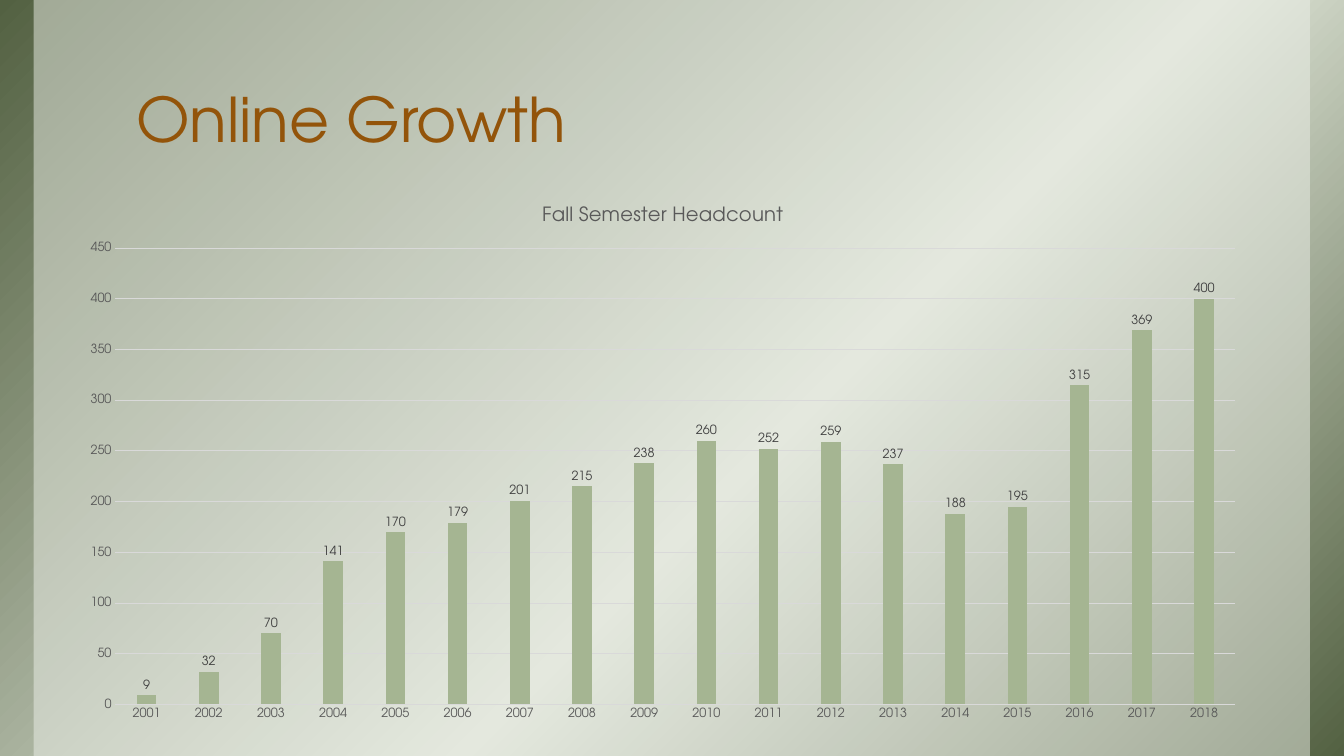
from lxml.etree import SubElement
from pptx import Presentation
from pptx.chart.data import CategoryChartData
from pptx.dml.color import RGBColor
from pptx.enum.chart import XL_CHART_TYPE, XL_LABEL_POSITION, XL_TICK_MARK
from pptx.enum.shapes import MSO_SHAPE
from pptx.enum.text import MSO_ANCHOR
from pptx.oxml.ns import qn
from pptx.util import Cm, Pt

FONT = "TeX Gyre Adventor"
DARK_GREEN = RGBColor(0x53, 0x61, 0x42)
PALE_GREEN = RGBColor(0xDB, 0xE1, 0xD3)
PANEL = RGBColor(0xED, 0xF0, 0xE9)
BROWN = RGBColor(0x93, 0x54, 0x0A)
BAR_GREEN = RGBColor(0xA5, 0xB5, 0x92)
GRID_GRAY = RGBColor(0xD9, 0xD9, 0xD9)
AXIS_GRAY = RGBColor(0x59, 0x59, 0x59)
LABEL_GRAY = RGBColor(0x40, 0x40, 0x40)
BLACK = RGBColor(0, 0, 0)


def style_font(font, size, color):
    font.name = FONT
    font.size = Pt(size)
    font.bold = False
    font.color.rgb = color


def add_plain_rectangle(left, width):
    """Add a full-height rectangle without line or shadow."""
    shape = slide.shapes.add_shape(
        MSO_SHAPE.RECTANGLE, left, 0, width, presentation.slide_height)
    shape.shadow.inherit = False
    shape.line.fill.background()
    return shape


presentation = Presentation()
presentation.slide_width = Cm(33.87)
presentation.slide_height = Cm(19.05)
slide = presentation.slides.add_slide(presentation.slide_layouts[6])

# Diagonal gradient backdrop
backdrop = add_plain_rectangle(0, presentation.slide_width)
backdrop.fill.gradient()
backdrop.fill.gradient_angle = 315
stop_list = backdrop._element.spPr.find(".//" + qn("a:gsLst"))
for stop in list(stop_list):
    stop_list.remove(stop)
for percent, color in ((0, DARK_GREEN), (58, PALE_GREEN), (100, DARK_GREEN)):
    stop = SubElement(stop_list, qn("a:gs"), pos=str(percent * 1000))
    SubElement(stop, qn("a:srgbClr"), val=str(color))

# Half-transparent panel
panel = add_plain_rectangle(Cm(0.85), Cm(32.16))
panel.fill.solid()
panel.fill.fore_color.rgb = PANEL
panel_color = panel._element.spPr.find(".//" + qn("a:srgbClr"))
SubElement(panel_color, qn("a:alpha"), val="50000")

# Title
title = slide.shapes.add_textbox(Cm(3.1), Cm(0.2), Cm(28.22), Cm(3.89))
title_frame = title.text_frame
title_frame.word_wrap = True
title_frame.vertical_anchor = MSO_ANCHOR.BOTTOM
title_frame.margin_left = title_frame.margin_right = Cm(0.33)
title_frame.margin_top = title_frame.margin_bottom = Cm(0.18)
title_frame.text = "Online Growth"
paragraph = title_frame.paragraphs[0]
paragraph.line_spacing = 0.85
style_font(paragraph.runs[0].font, 44, BROWN)

# Headcount chart
headcounts = (9, 32, 70, 141, 170, 179, 201, 215, 238,
              260, 252, 259, 237, 188, 195, 315, 369, 400)
chart_data = CategoryChartData()
chart_data.categories = [str(2001 + i) for i in range(len(headcounts))]
chart_data.add_series("Series 1", headcounts)
chart = slide.shapes.add_chart(
    XL_CHART_TYPE.COLUMN_CLUSTERED,
    Cm(1.68), Cm(4.65), Cm(30.05), Cm(13.77), chart_data).chart
style_font(chart.font, 10, BLACK)
chart.has_legend = False
chart.has_title = True
chart_title = chart.chart_title.text_frame
chart_title.text = "Fall Semester Headcount"
style_font(chart_title.paragraphs[0].runs[0].font, 14, AXIS_GRAY)

for axis in (chart.category_axis, chart.value_axis):
    axis.major_tick_mark = XL_TICK_MARK.NONE
    axis.minor_tick_mark = XL_TICK_MARK.NONE
    style_font(axis.tick_labels.font, 9, AXIS_GRAY)
chart.value_axis.minimum_scale = 0
chart.value_axis.maximum_scale = 450
chart.value_axis.major_unit = 50
chart.value_axis.format.line.fill.background()
for line in (chart.category_axis.format.line,
             chart.value_axis.major_gridlines.format.line):
    line.color.rgb = GRID_GRAY
    line.width = Pt(0.75)

plot = chart.plots[0]
plot.vary_by_categories = False
plot.gap_width = 219
plot.overlap = -27
bars = plot.series[0]
bars.format.fill.solid()
bars.format.fill.fore_color.rgb = BAR_GREEN
labels = bars.data_labels
labels.show_value = True
labels.position = XL_LABEL_POSITION.OUTSIDE_END
style_font(labels.font, 9, LABEL_GRAY)

presentation.save("out.pptx")
